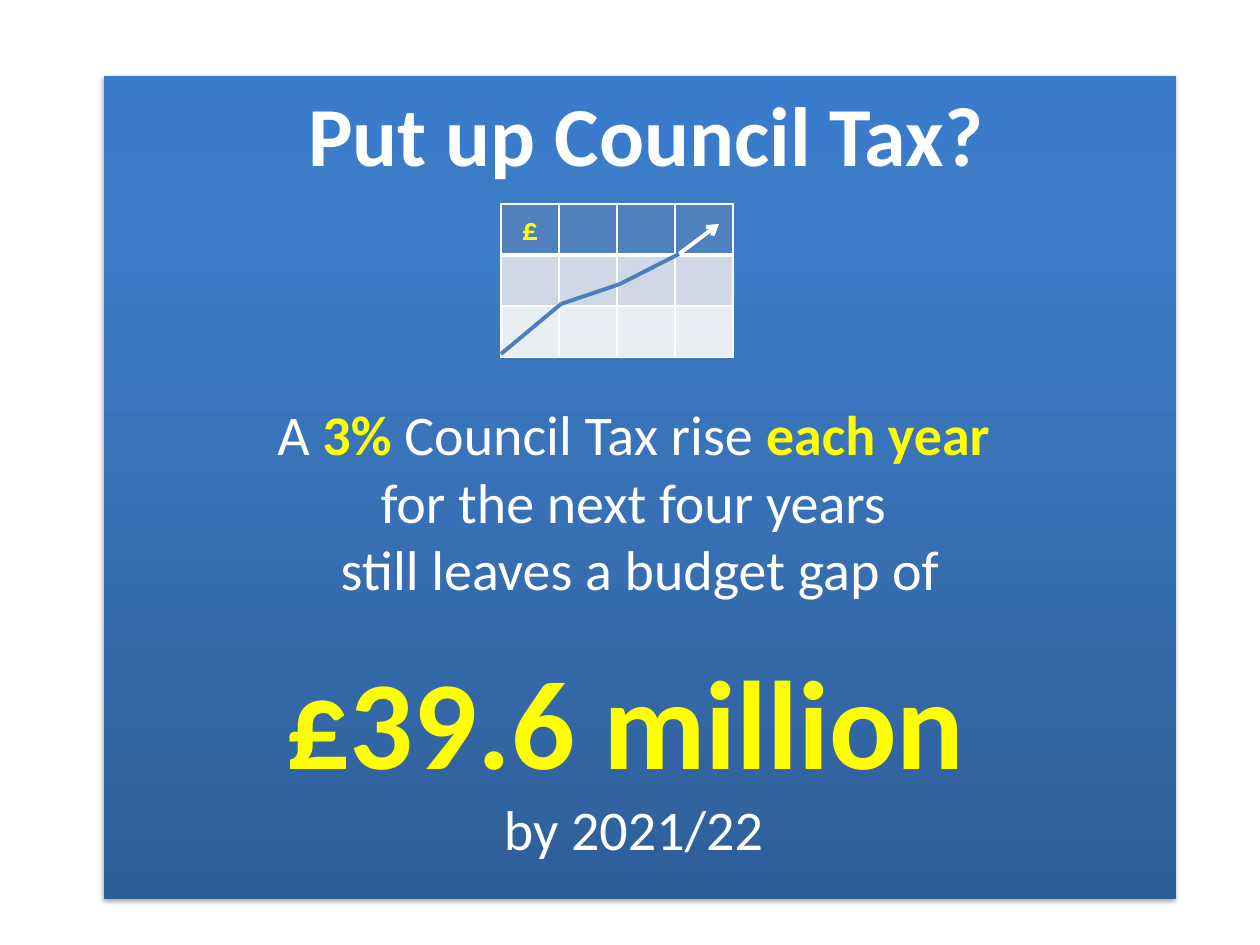
from itertools import pairwise

from pptx import Presentation
from pptx.dml.color import RGBColor
from pptx.enum.shapes import MSO_CONNECTOR, MSO_SHAPE
from pptx.enum.text import MSO_ANCHOR, PP_ALIGN
from pptx.oxml.ns import qn
from pptx.util import Emu, Pt
from lxml.etree import SubElement

WHITE = RGBColor(0xFF, 0xFF, 0xFF)
YELLOW = RGBColor(0xFF, 0xFF, 0x00)
BLACK = RGBColor(0x00, 0x00, 0x00)
TREND_BLUE = RGBColor(0x4B, 0x7E, 0xBC)
ROW_FILLS = [
    RGBColor(0x4F, 0x81, 0xBD),
    RGBColor(0xD0, 0xD8, 0xE8),
    RGBColor(0xE9, 0xED, 0xF4),
]
PANEL_STOPS = [
    (0, RGBColor(0x2F, 0x5F, 0x99)),
    (80, RGBColor(0x3D, 0x7C, 0xC7)),
    (100, RGBColor(0x3A, 0x7C, 0xCB)),
]
FONT = "Calibri"
COLUMNS = 4
CELL_WIDTH, CELL_HEIGHT = 58, 51
TREND = [(501, 354), (561, 304), (620, 284), (679, 254), (719, 224)]

MESSAGE = [
    (0, 12, 48, [("Put up Council Tax?", WHITE, True)]),
    (124, 0, 32, [
        ("A ", WHITE, False),
        ("3% ", YELLOW, True),
        ("Council Tax rise ", WHITE, False),
        ("each year ", YELLOW, True),
    ]),
    (0, 0, 32, [("for the next four years ", WHITE, False)]),
    (0, 0, 32, [("still leaves a budget gap of", WHITE, False)]),
    (24, 0, 72, [("£39.6 million ", YELLOW, True)]),
    (0, 0, 32, [("by 2021/22 ", WHITE, False)]),
]


def px(count):
    """Turn pixels into EMU."""
    return Emu(round(count * 914400 / 126))


def add_color(parent, color):
    """Append a colour element and return it."""
    return SubElement(parent, qn("a:srgbClr"), val=str(color))


def style_run(run, size, color, bold):
    """Set the font of one run."""
    run.font.name = FONT
    run.font.size = Pt(size)
    run.font.color.rgb = color
    run.font.bold = bold


def paint_panel(panel):
    """Give the panel its vertical gradient and soft shadow."""
    panel.line.fill.background()
    panel.fill.gradient()
    panel.fill.gradient_angle = 90
    properties = panel._element.spPr
    stops = properties.find(f".//{qn('a:gsLst')}")
    for stop in list(stops):
        stops.remove(stop)
    for percent, color in PANEL_STOPS:
        add_color(SubElement(stops, qn("a:gs"), pos=str(percent * 1000)), color)
    panel.shadow.inherit = False
    shadow = SubElement(
        properties.find(qn("a:effectLst")), qn("a:outerShdw"),
        blurRad=str(Pt(3.1)), dist=str(Pt(1.8)), dir="5400000", rotWithShape="0",
    )
    SubElement(add_color(shadow, BLACK), qn("a:alpha"), val="35000")


def write_message(frame):
    """Write the centred lines of the message."""
    frame.word_wrap = True
    frame.vertical_anchor = MSO_ANCHOR.TOP
    for index, (gap, indent, size, parts) in enumerate(MESSAGE):
        line = frame.add_paragraph() if index else frame.paragraphs[0]
        line.alignment = PP_ALIGN.CENTER
        line.space_before = Pt(gap)
        line._p.get_or_add_pPr().set("marL", str(px(indent)))
        for text, color, bold in parts:
            run = line.add_run()
            run.text = text
            style_run(run, size, color, bold)


def add_panel(slide):
    """Add the blue panel that carries the message."""
    panel = slide.shapes.add_shape(
        MSO_SHAPE.RECTANGLE, px(104), px(76), px(1072), px(823)
    )
    paint_panel(panel)
    write_message(panel.text_frame)


def set_borders(cell, row):
    """Draw white cell borders, thicker beneath the header row."""
    heavy_side = {0: "B", 1: "T"}.get(row)
    for side in "LRTB":
        width = Pt(3 if side == heavy_side else 1)
        border = SubElement(
            cell._tc.get_or_add_tcPr(), qn(f"a:ln{side}"), w=str(width)
        )
        add_color(SubElement(border, qn("a:solidFill")), WHITE)


def add_grid(slide):
    """Add the table that serves as the chart grid."""
    grid = slide.shapes.add_table(
        len(ROW_FILLS), COLUMNS, px(501), px(204),
        px(COLUMNS * CELL_WIDTH), px(len(ROW_FILLS) * CELL_HEIGHT),
    ).table
    for column in grid.columns:
        column.width = px(CELL_WIDTH)
    for row, color in enumerate(ROW_FILLS):
        grid.rows[row].height = px(CELL_HEIGHT)
        for cell in grid.rows[row].cells:
            set_borders(cell, row)
            cell.fill.solid()
            cell.fill.fore_color.rgb = color
    pound = grid.cell(0, 0).text_frame.paragraphs[0]
    pound.text = "£"
    pound.alignment = PP_ALIGN.CENTER
    style_run(pound.runs[0], 18, YELLOW, True)


def add_segment(slide, start, end, color):
    """Add one straight piece of the trend and return it."""
    segment = slide.shapes.add_connector(
        MSO_CONNECTOR.STRAIGHT, *map(px, start + end)
    )
    segment.line.color.rgb = color
    segment.line.width = Pt(2.25)
    SubElement(segment._element.spPr, qn("a:effectLst"))
    return segment


def add_trend(slide):
    """Add the rising trend, ending in a white arrow."""
    *rises, forecast = pairwise(TREND)
    arrow = add_segment(slide, *forecast, WHITE)
    SubElement(arrow.line._get_or_add_ln(), qn("a:tailEnd"), type="arrow")
    for start, end in rises:
        add_segment(slide, start, end, TREND_BLUE)


def main():
    """Build and save the slide."""
    deck = Presentation()
    deck.slide_width, deck.slide_height = px(1260), px(945)
    slide = deck.slides.add_slide(deck.slide_layouts[6])
    add_panel(slide)
    add_grid(slide)
    add_trend(slide)
    deck.save("out.pptx")


if __name__ == "__main__":
    main()
